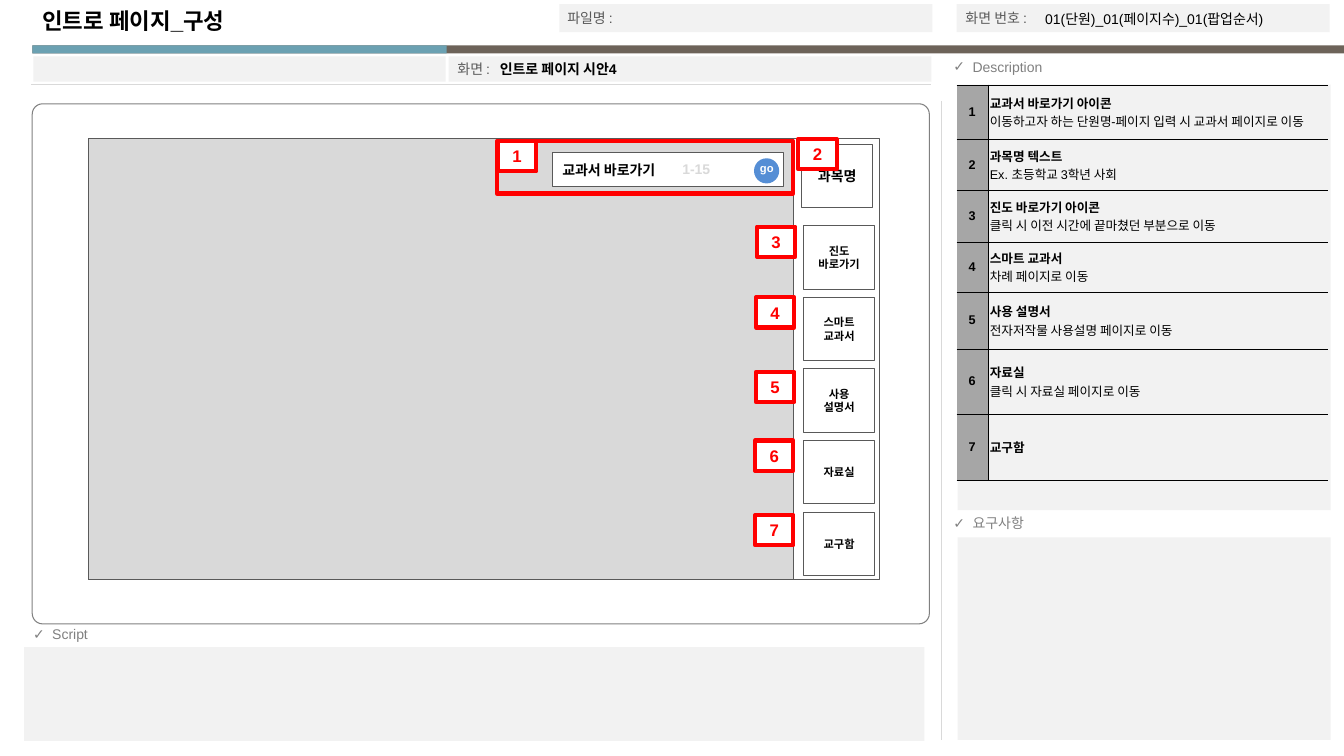
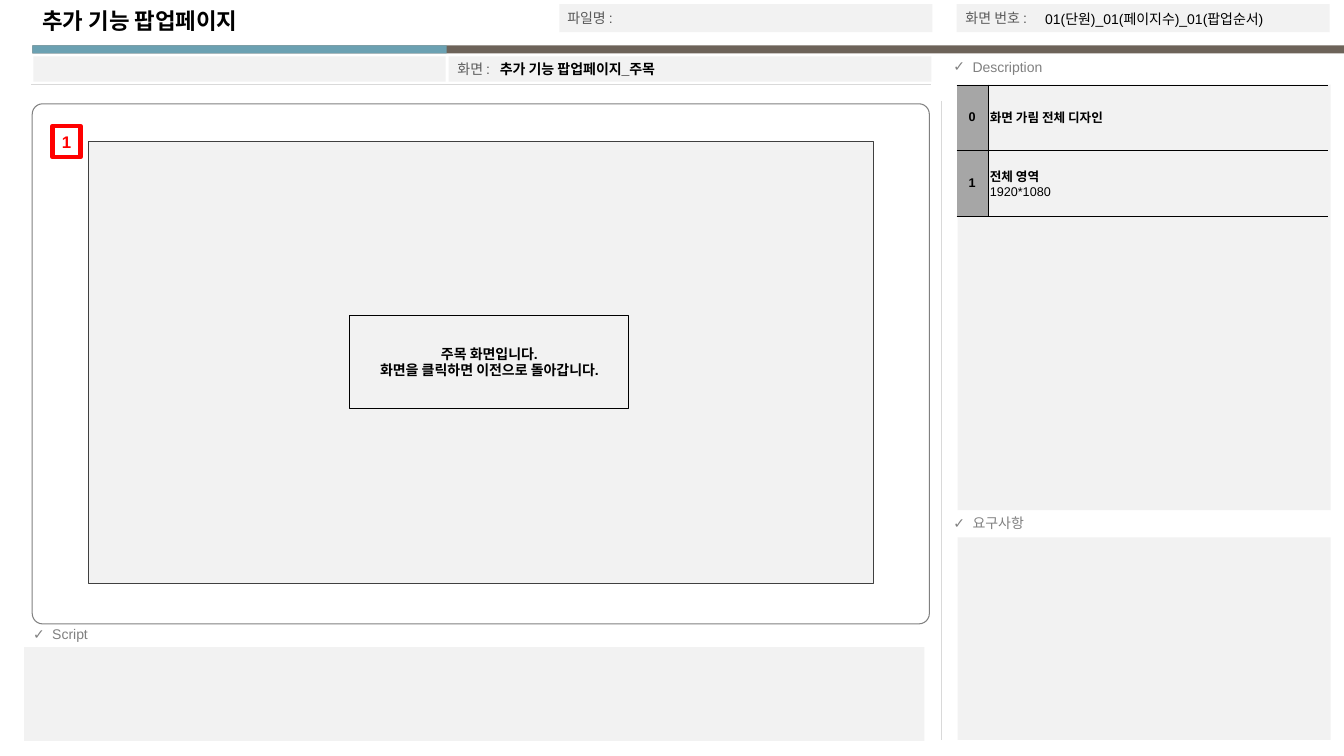
from lxml import etree
from pptx import Presentation
from pptx.dml.color import RGBColor
from pptx.enum.shapes import MSO_CONNECTOR, MSO_SHAPE
from pptx.enum.text import MSO_ANCHOR, MSO_AUTO_SIZE, PP_ALIGN
from pptx.oxml.ns import qn
from pptx.util import Inches, Pt

RECT, ROUND, OVAL = MSO_SHAPE.RECTANGLE, MSO_SHAPE.ROUNDED_RECTANGLE, MSO_SHAPE.OVAL
STRAIGHT = MSO_CONNECTOR.STRAIGHT
LEFT, CENTER = PP_ALIGN.LEFT, PP_ALIGN.CENTER
TOP, MIDDLE = MSO_ANCHOR.TOP, MSO_ANCHOR.MIDDLE
FIXED = MSO_AUTO_SIZE.NONE

CELL = Inches(0.1)  # one column or row of the grid
COLS, ROWS = 133.33, 75
TITLE_ONLY = 5
LATIN, KOREAN = "Arial", "Noto Sans CJK KR"
COLORS = {
    "white": "FFFFFF", "black": "000000", "panel": "F2F2F2", "rule": "D9D9D9",
    "brown": "6D6359", "teal": "6BA1B2", "check": "808080", "label": "595959",
    "number": "A6A6A6", "red": "FF0000", "blue": "558ED5", "popup": "404040",
}


def rgb(name):
    return RGBColor.from_string(COLORS[name])


def grid(*values):
    return [round(v * CELL) for v in values]


class Storyboard:
    """Style of the storyboard and the slide being drawn; lengths are grid cells."""

    def __init__(self, prs):
        self.prs = prs
        prs.slide_width, prs.slide_height = grid(COLS, ROWS)
        self.slide = None

    def set_text(self, tf, text, size, color, bold=False, align=LEFT):
        tf.text = text
        for p in tf.paragraphs:
            p.alignment = align
            for r in p.runs:
                r.font.size, r.font.bold, r.font.name = Pt(size), bold, LATIN
                r.font.color.rgb = rgb(color)
                etree.SubElement(r.font._element, qn("a:ea")).set("typeface", KOREAN)

    def shape(self, x, y, w, h, fill=None, line=None, width=0.75, kind=RECT):
        sp = self.slide.shapes.add_shape(kind, *grid(x, y, w, h))
        sp.shadow.inherit = False
        if fill:
            sp.fill.solid()
            sp.fill.fore_color.rgb = rgb(fill)
        else:
            sp.fill.background()
        if line:
            sp.line.color.rgb = rgb(line)
            sp.line.width = Pt(width)
        else:
            sp.line.fill.background()
        return sp

    def box(self, x, y, w, h, text, size, color="black", bold=True, **style):
        """Draw a rectangle with centred text."""
        sp = self.shape(x, y, w, h, **style)
        tf = sp.text_frame
        tf.word_wrap, tf.vertical_anchor = True, MIDDLE
        tf.margin_left = tf.margin_right = 0
        self.set_text(tf, text, size, color, bold, CENTER)

    def text(self, x, y, w, h, text, size=10, color="black", bold=False, anchor=MIDDLE):
        tf = self.slide.shapes.add_textbox(*grid(x, y, w, h)).text_frame
        tf.word_wrap, tf.vertical_anchor = True, anchor
        self.set_text(tf, text, size, color, bold)
        return tf

    def rule(self, x1, y1, x2, y2):
        line = self.slide.shapes.add_connector(STRAIGHT, *grid(x1, y1, x2, y2))
        line.line.color.rgb = rgb("rule")
        line.line.width = Pt(0.75)
        etree.SubElement(line._element.spPr, qn("a:effectLst"))

    def section(self, x, y, name):
        """Draw a heading with a check mark."""
        tf = self.text(x, y, 39.7, 2.7, name, color="check", anchor=TOP)
        pPr = tf.paragraphs[0]._p.get_or_add_pPr()
        pPr.set("marL", str(Inches(0.19)))
        pPr.set("indent", str(-Inches(0.19)))
        etree.SubElement(pPr, qn("a:buFont")).set("typeface", LATIN)
        etree.SubElement(pPr, qn("a:buChar")).set("char", "✓")

    def badge(self, x, y, number, w=3.8, h=3):
        self.box(x, y, w, h, str(number), 12, "red", fill="white", line="red", width=3)

    def borders(self, cell, sides):
        """Draw hairlines on the given sides (L, R, T, B) and clear the others."""
        tcPr = cell._tc.get_or_add_tcPr()
        for side in "LRTB":
            ln = etree.SubElement(tcPr, qn("a:ln" + side), w=str(Pt(0.25)))
            if side in sides:
                fill = etree.SubElement(ln, qn("a:solidFill"))
                etree.SubElement(fill, qn("a:srgbClr")).set("val", COLORS["black"])
            else:
                etree.SubElement(ln, qn("a:noFill"))

    def descriptions(self, rows, first=1):
        """Draw the numbered table; each row is (height, text)."""
        size = grid(94.9, 8.4, 36.8, sum(height for height, _ in rows))
        table = self.slide.shapes.add_table(len(rows), 2, *size).table
        table.first_row = table.horz_banding = False
        for column, width in zip(table.columns, grid(3.1, 33.7)):
            column.width = width
        for i, (height, text) in enumerate(rows):
            table.rows[i].height = grid(height)[0]
            number, body = table.cell(i, 0), table.cell(i, 1)
            for cell, sides in ((number, "RTB"), (body, "LTB")):
                self.borders(cell, sides)
                cell.vertical_anchor = MIDDLE
                cell.margin_left = cell.margin_right = Inches(0.02)
                cell.margin_top = cell.margin_bottom = Inches(0.02)
            number.fill.solid()
            number.fill.fore_color.rgb = rgb("number")
            body.fill.background()
            self.set_text(number.text_frame, str(first + i), 9, "black", True, CENTER)
            self.set_text(body.text_frame, text, 9, "black", True)
            for p in body.text_frame.paragraphs[1:]:
                p.runs[0].font.bold = False

    def title(self, text):
        sp = self.slide.shapes.title
        sp.left, sp.top, sp.width, sp.height = grid(3.2, 0.2, 52, 3.7)
        tf = sp.text_frame
        tf.auto_size, tf.vertical_anchor = FIXED, MIDDLE
        self.set_text(tf, text, 16, "black", True)

    def new_page(self, title, screen):
        """Start a slide with the storyboard form around an empty screen."""
        self.slide = self.prs.slides.add_slide(self.prs.slide_layouts[TITLE_ONLY])
        self.title(title)
        self.shape(3.2, 4.5, COLS - 3.2, 0.8, "brown")
        self.shape(3.2, 4.5, 41.1, 0.8, "teal")
        for panel in ((95, 8.4, 37, 42.2), (95, 53.3, 37, 20.1), (2.4, 64.2, 89.3, 9.3),
                      (3.3, 5.6, 40.9, 2.5), (44.5, 5.6, 47.9, 2.5),
                      (55.5, 0.4, 37, 2.8), (94.9, 0.4, 37, 2.8)):
            self.shape(*panel, fill="panel")
        for x, y, name in ((93.6, 5.3, "Description"), (93.6, 50.6, "요구사항"),
                           (2.3, 61.6, "Script")):
            self.section(x, y, name)
        for x, y, label in ((44.4, 5.6, "화면 :"), (55.3, 0.5, "파일명 :"),
                            (94.8, 0.5, "화면 번호 :")):
            self.text(x, y, 36.6, 2.5, label, color="label")
        self.text(48.6, 5.6, 43.8, 2.5, screen, bold=True)
        self.text(102.7, 0.6, 29, 2.5, "01(단원)_01(페이지수)_01(팝업순서)")
        self.rule(93.4, 10, 93.4, 73.4)
        self.rule(3.1, 8.4, 92.4, 8.4)
        self.shape(3.2, 10.3, 89, 51.6, "white", "check", kind=ROUND).adjustments[0] = 0.02


def intro_page(board):
    board.new_page("인트로 페이지_구성", "인트로 페이지 시안4")
    board.descriptions([
        (5.4, "교과서 바로가기 아이콘\n이동하고자 하는 단원명-페이지 입력 시 교과서 페이지로 이동"),
        (5.1, "과목명 텍스트\nEx. 초등학교 3학년 사회"),
        (5.1, "진도 바로가기 아이콘\n클릭 시 이전 시간에 끝마쳤던 부분으로 이동"),
        (5, "스마트 교과서\n차례 페이지로 이동"),
        (5.6, "사용 설명서\n전자저작물 사용설명 페이지로 이동"),
        (6.5, "자료실\n클릭 시 자료실 페이지로 이동"),
        (6.5, "교구함"),
    ])
    board.shape(8.8, 13.7, 78.5, 43.8, "white", "label")
    board.shape(8.8, 13.7, 69.9, 43.8, "rule", "label")

    tile = {"fill": "white", "line": "label"}
    board.box(79.5, 14.3, 7.1, 6.3, "과목명", 10, **tile)
    menu = ("진도\n바로가기", "스마트\n교과서", "사용\n설명서", "자료실", "교구함")
    for i, name in enumerate(menu):
        board.box(79.7, 22.4 + 7.1 * i, 7.1, 6.3, name, 8, **tile)

    board.shape(54.8, 15.1, 22.9, 3.4, **tile)
    board.text(54.8, 15.5, 12.6, 2.7, "교과서 바로가기", bold=True)
    board.text(66.7, 15.8, 8.1, 1.9, "1-15", color="rule", bold=True)
    board.shape(74.8, 15.7, 2.5, 2.5, "blue", kind=OVAL)
    board.text(74.4, 15.6, 3.9, 2.2, "go", 8, "white", True)

    spots = ((49.4, 14), (79.2, 13.8), (75.1, 22.5), (75, 29.5), (75, 36.9),
             (74.9, 43.7), (74.9, 51.1))
    for number, (x, y) in enumerate(spots, 1):
        board.badge(x, y, number)
    board.shape(49.3, 14, 29.4, 5.2, line="red", width=3)


def popup_page(board):
    board.new_page("추가 기능 팝업페이지", "추가 기능 팝업페이지_주목")
    board.descriptions([(6.5, "화면 가림 전체 디자인"), (6.5, "전체 영역\n1920*1080")], first=0)
    board.badge(5.2, 12.5, 1, 2.8, 3.1)
    board.shape(8.8, 14, 77.9, 43.9, "panel", "popup")
    board.box(34.7, 31.3, 27.7, 9.2, "주목 화면입니다.\n화면을 클릭하면 이전으로 돌아갑니다.",
              10, line="black")


def main():
    prs = Presentation()
    board = Storyboard(prs)
    intro_page(board)
    popup_page(board)
    prs.save("out.pptx")


if __name__ == "__main__":
    main()
